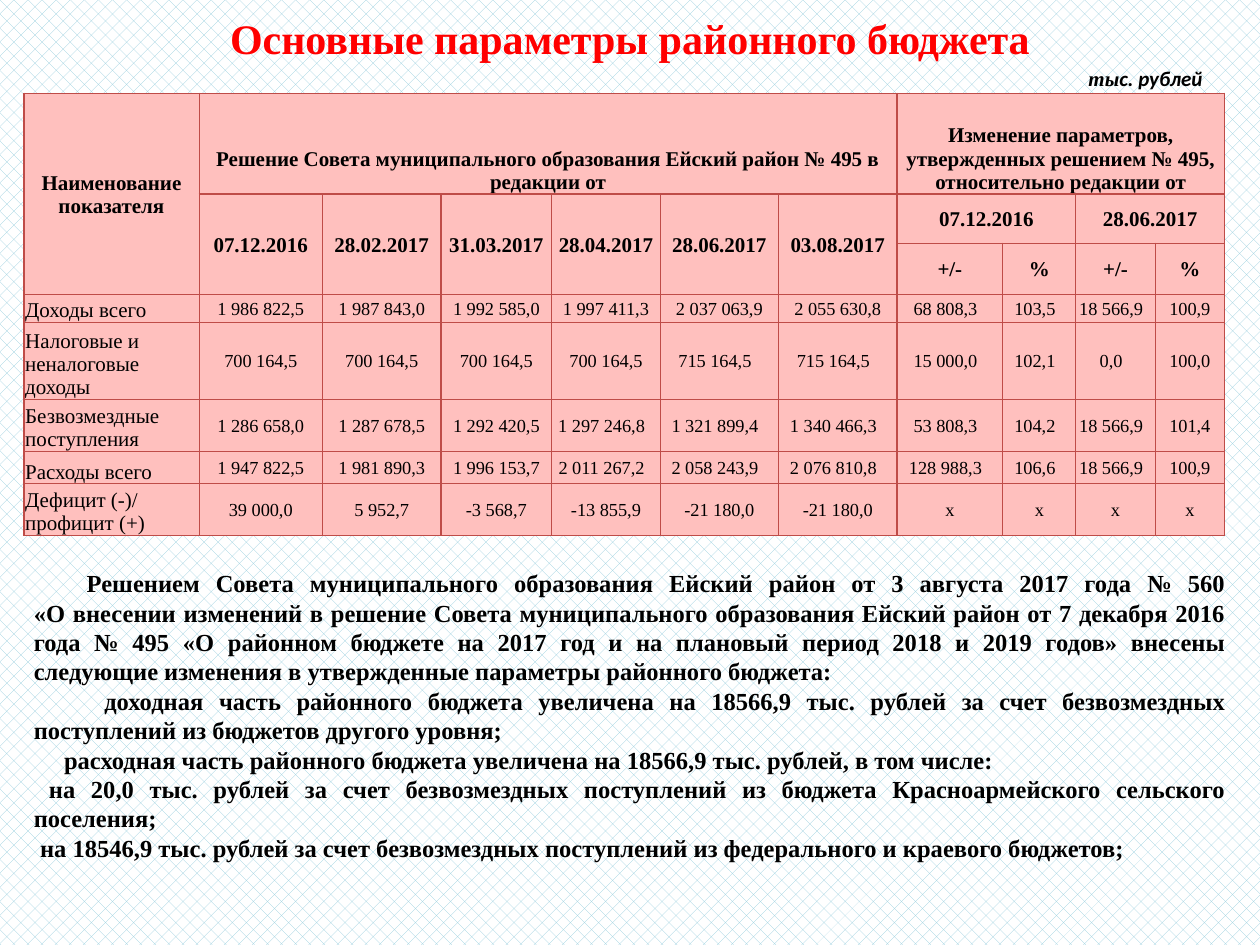
from pptx import Presentation
from pptx.dml.color import RGBColor
from pptx.enum.dml import MSO_PATTERN
from pptx.enum.text import MSO_ANCHOR, PP_ALIGN
from pptx.oxml import parse_xml
from pptx.oxml.ns import nsdecls
from pptx.util import Inches, Pt

LEFT, CENTER, JUSTIFY = PP_ALIGN.LEFT, PP_ALIGN.CENTER, PP_ALIGN.JUSTIFY
TOP, MIDDLE, BOTTOM = MSO_ANCHOR.TOP, MSO_ANCHOR.MIDDLE, MSO_ANCHOR.BOTTOM
HATCH = MSO_PATTERN.PERCENT_25

THEME = {
    "serif": "Times New Roman", "sans": "Calibri",
    "title": "FF0000", "ink": "000000", "cell": "FFC0BE", "border": "BF4C48",
    "hatch": "93CDDD", "paper": "FFFFFF",
    "title_pt": 24, "body_pt": 14, "label_pt": 12, "value_pt": 10.5, "border_pt": 0.75,
}

TITLE = "Основные параметры районного бюджета"
UNITS = [("ты", THEME["serif"]), ("с. рублей", THEME["sans"])]

COLS = [1.39, 0.98, 0.94, 0.88, 0.86, 0.94, 0.94, 0.84, 0.58, 0.63, 0.55]
ROWS = [0.8, 0.39, 0.4, 0.22, 0.61, 0.41, 0.26, 0.41]
DATES = ["07.12.2016", "28.02.2017", "31.03.2017", "28.04.2017", "28.06.2017", "03.08.2017"]
HEADERS = [
    (0, 0, 3, 1, "Наименование показателя", MIDDLE),
    (0, 1, 1, 6, "Решение Совета муниципального образования Ейский район № 495 в редакции от", BOTTOM),
    (0, 7, 1, 4, "Изменение параметров, утвержденных решением № 495, относительно редакции от", BOTTOM),
    (1, 7, 1, 2, "07.12.2016", MIDDLE),
    (1, 9, 1, 2, "28.06.2017", MIDDLE),
]
HEADERS += [(1, c, 2, 1, date, MIDDLE) for c, date in enumerate(DATES, 1)]
HEADERS += [(2, c, 1, 1, sign, MIDDLE) for c, sign in enumerate(["+/-", "%"] * 2, 7)]

FIRST_DATA_ROW = 3
LAST_COL = len(COLS) - 1
# Each row: label, first column shifted left, values
DATA = [
    ("Доходы всего", 7,
     ["1 986 822,5", "1 987 843,0", "1 992 585,0", "1 997 411,3", "2 037 063,9",
      "2 055 630,8", "68 808,3", "103,5", "18 566,9", "100,9"]),
    ("Налоговые и неналоговые доходы", 5,
     ["700 164,5", "700 164,5", "700 164,5", "700 164,5", "715 164,5",
      "715 164,5", "15 000,0", "102,1", "0,0", "100,0"]),
    ("Безвозмездные поступления", 4,
     ["1 286 658,0", "1 287 678,5", "1 292 420,5", "1 297 246,8", "1 321 899,4",
      "1 340 466,3", "53 808,3", "104,2", "18 566,9", "101,4"]),
    ("Расходы всего", 4,
     ["1 947 822,5", "1 981 890,3", "1 996 153,7", "2 011 267,2", "2 058 243,9",
      "2 076 810,8", "128 988,3", "106,6", "18 566,9", "100,9"]),
    ("Дефицит (-)/ профицит (+)", LAST_COL,
     ["39 000,0", "5 952,7", "-3 568,7", "-13 855,9", "-21 180,0",
      "-21 180,0", "x", "x", "x", "x"]),
]

BODY = [
    (0.42, ["Решением Совета муниципального образования Ейский район от 3 августа 2017 года № 560",
            "«О внесении изменений в решение Совета муниципального образования Ейский район "
            "от 7 декабря 2016 года № 495 «О районном бюджете на 2017 год и на плановый период "
            "2018 и 2019 годов» внесены следующие изменения в утвержденные параметры районного бюджета:"]),
    (0.56, ["доходная часть районного бюджета увеличена на 18566,9 тыс. рублей за счет "
            "безвозмездных поступлений из бюджетов другого уровня;"]),
    (0.24, ["расходная часть районного бюджета увеличена на 18566,9 тыс. рублей, в том числе:"]),
    (0.12, ["на 20,0 тыс. рублей за счет безвозмездных поступлений из бюджета "
            "Красноармейского сельского поселения;"]),
    (0.05, ["на 18546,9 тыс. рублей за счет безвозмездных поступлений из федерального "
            "и краевого бюджетов;"]),
]


def rgb(name):
    return RGBColor.from_string(THEME[name])


def add_run(p, text, size, color="ink", bold=True, italic=False, font=THEME["serif"]):
    r = p.add_run()
    r.text = text
    r.font.name, r.font.size = font, Pt(THEME[size])
    r.font.bold, r.font.italic = bold, italic
    r.font.color.rgb = rgb(color)


def place(shape, left, top, width, height):
    shape.left, shape.top = Inches(left), Inches(top)
    shape.width, shape.height = Inches(width), Inches(height)


def add_text_box(s, left, top, width, height, wrap):
    tf = s.shapes.add_textbox(Inches(left), Inches(top), Inches(width), Inches(height)).text_frame
    tf.word_wrap = wrap
    return tf


def style_cell(cell):
    cell.margin_left = cell.margin_right = cell.margin_top = Inches(0.01)
    cell.margin_bottom = 0
    tc_pr = cell._tc.get_or_add_tcPr()
    for side in "LRTB":
        tc_pr.append(parse_xml(
            f'<a:ln{side} {nsdecls("a")} w="{Pt(THEME["border_pt"])}"><a:solidFill>'
            f'<a:srgbClr val="{THEME["border"]}"/></a:solidFill></a:ln{side}>'))
    cell.fill.solid()
    cell.fill.fore_color.rgb = rgb("cell")


def write_cell(cell, text, size, align=CENTER, anchor=MIDDLE, bold=False):
    cell.vertical_anchor = anchor
    p = cell.text_frame.paragraphs[0]
    p.alignment = align
    add_run(p, text, size, bold=bold)


def add_budget_table(s):
    table = s.shapes.add_table(len(ROWS), len(COLS), Inches(0.19), Inches(0.74),
                               Inches(sum(COLS)), Inches(sum(ROWS))).table
    table.first_row = table.horz_banding = False
    for column, width in zip(table.columns, COLS):
        column.width = Inches(width)
    for row, height in zip(table.rows, ROWS):
        row.height = Inches(height)
    for cell in table.iter_cells():
        style_cell(cell)
    for r, c, rowspan, colspan, text, anchor in HEADERS:
        cell = table.cell(r, c)
        if rowspan * colspan > 1:
            cell.merge(table.cell(r + rowspan - 1, c + colspan - 1))
        write_cell(cell, text, "label_pt", anchor=anchor, bold=True)
    for r, (label, shift_from, values) in enumerate(DATA, FIRST_DATA_ROW):
        write_cell(table.cell(r, 0), label, "label_pt", LEFT, BOTTOM)
        for c, value in enumerate(values, 1):
            cell = table.cell(r, c)
            write_cell(cell, value, "value_pt")
            if shift_from <= c < LAST_COL:
                cell.margin_right = Inches(0.08)


def add_body(s):
    tf = add_text_box(s, 0.17, 4.46, 9.66, 2.93, True)
    for i, (indent, lines) in enumerate(BODY):
        p = tf.add_paragraph() if i else tf.paragraphs[0]
        p.alignment = JUSTIFY
        p._p.get_or_add_pPr().set("indent", str(Inches(indent)))
        for n, line in enumerate(lines):
            if n:
                p.add_line_break()
            add_run(p, line, "body_pt")


def main():
    prs = Presentation()
    prs.slide_width, prs.slide_height = Inches(10), Inches(7.5)
    s = prs.slides.add_slide(prs.slide_layouts[5])
    fill = s.background.fill
    fill.patterned()
    fill.pattern = HATCH
    fill.fore_color.rgb, fill.back_color.rgb = rgb("hatch"), rgb("paper")

    title = s.shapes.title
    place(title, 1.69, 0.05, 6.62, 0.5)
    tf = title.text_frame
    tf.word_wrap, tf.vertical_anchor = False, TOP
    tf.paragraphs[0].alignment = CENTER
    add_run(tf.paragraphs[0], TITLE, "title_pt", "title")

    units = add_text_box(s, 8.54, 0.47, 1.12, 0.3, False)
    for text, font in UNITS:
        add_run(units.paragraphs[0], text, "label_pt", italic=True, font=font)

    add_budget_table(s)
    add_body(s)
    prs.save("out.pptx")


if __name__ == "__main__":
    main()
